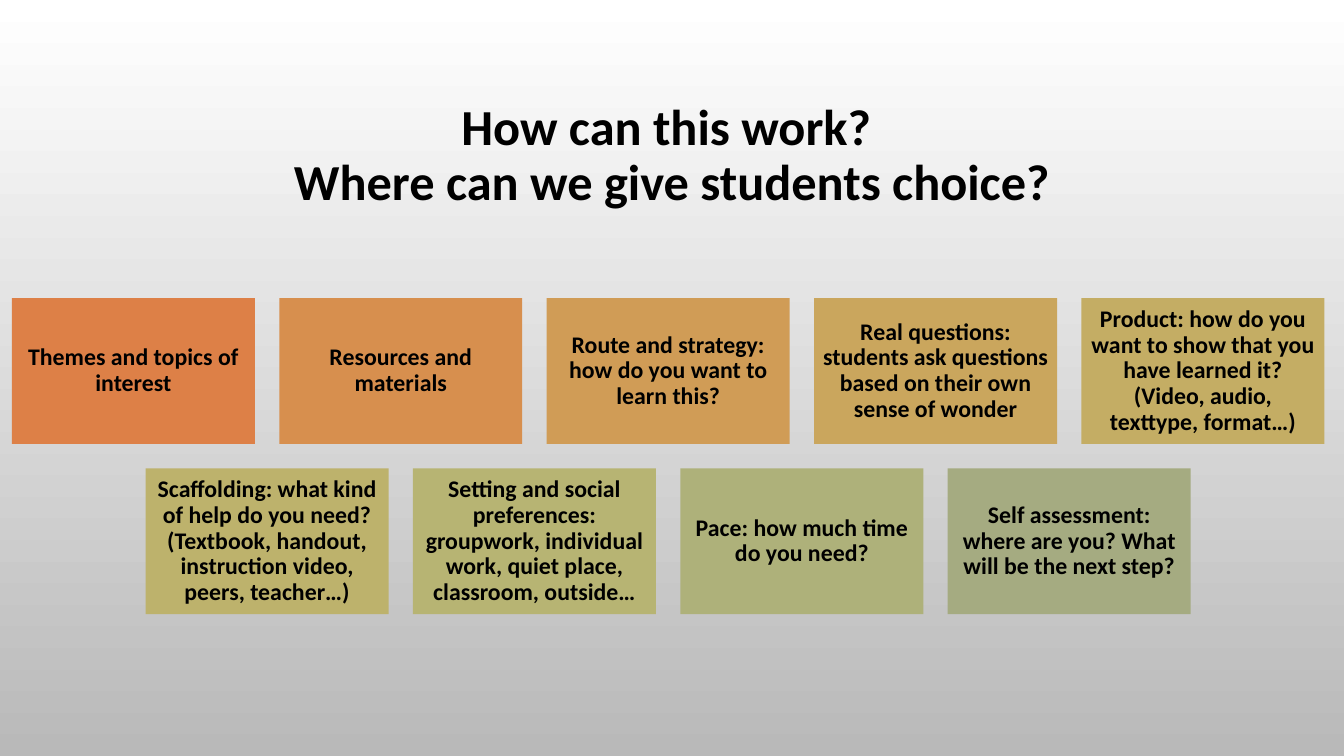
from pptx import Presentation, util as u
from pptx.dml.color import RGBColor
from pptx.enum import shapes, text


def color(hex_code):
    return RGBColor.from_string(hex_code)


def write(tf, words, size):
    tf.word_wrap = True
    tf.auto_size = text.MSO_AUTO_SIZE.NONE
    tf.vertical_anchor = text.MSO_ANCHOR.MIDDLE
    tf.text = words
    p = tf.paragraphs[0]
    p.alignment = text.PP_ALIGN.CENTER
    p.line_spacing = 0.9
    p.font.name = "Calibri"
    p.font.size = u.Pt(size)
    p.font.bold = True
    p.font.color.rgb = color("000000")


prs = Presentation()
prs.slide_width, prs.slide_height = u.Pt(960), u.Pt(540)
s = prs.slides.add_slide(prs.slide_layouts[5])

# Background: white at the top to grey at the bottom
bg = s.background.fill
bg.gradient()
bg.gradient_angle = 270
for stop, shade in zip(bg.gradient_stops, ("FFFFFF", "B9B9B9")):
    stop.color.rgb = color(shade)

# Title
title = s.shapes.title
title.left, title.top, title.width, title.height = (
    u.Pt(v) for v in (72, 49, 816, 126))
write(title.text_frame,
      "How can this work? \vWhere can we give students choice?", 36)

# Choices, row by row
rows = [
    [("Themes and topics of interest", "DD8047"),
     ("Resources and materials", "D78F4E"),
     ("Route and strategy: how do you want to learn this?", "D09C56"),
     ("Real questions: students ask questions based on their own "
      "sense of wonder", "CAA65D"),
     ("Product: how do you want to show that you have learned it? "
      "(Video, audio, texttype, format…)", "C4AD64")],
    [("Scaffolding: what kind of help do you need? (Textbook, handout, "
      "instruction video, peers, teacher…)", "BDB26C"),
     ("Setting and social preferences: groupwork, individual work, "
      "quiet place, classroom, outside…", "B7B473"),
     ("Pace: how much time do you need?", "AEB17A"),
     ("Self assessment: where are you? What will be the next step?",
      "A5AB81")],
]
box_w, box_h, gap = 173.6, 104.2, 17.4
center, top = 477.3, 213

# Each row is centred on the same axis
for i, row in enumerate(rows):
    left = center - (len(row) * (box_w + gap) - gap) / 2
    for j, (words, fill) in enumerate(row):
        sp = s.shapes.add_shape(
            shapes.MSO_SHAPE.RECTANGLE,
            u.Pt(left + j * (box_w + gap)), u.Pt(top + i * (box_h + gap)),
            u.Pt(box_w), u.Pt(box_h))
        sp.shadow.inherit = False
        sp.fill.solid()
        sp.fill.fore_color.rgb = color(fill)
        sp.line.fill.background()
        tf = sp.text_frame
        tf.margin_left = tf.margin_right = u.Pt(5)
        tf.margin_top = tf.margin_bottom = u.Pt(5)
        write(tf, words, 17)

prs.save("out.pptx")
